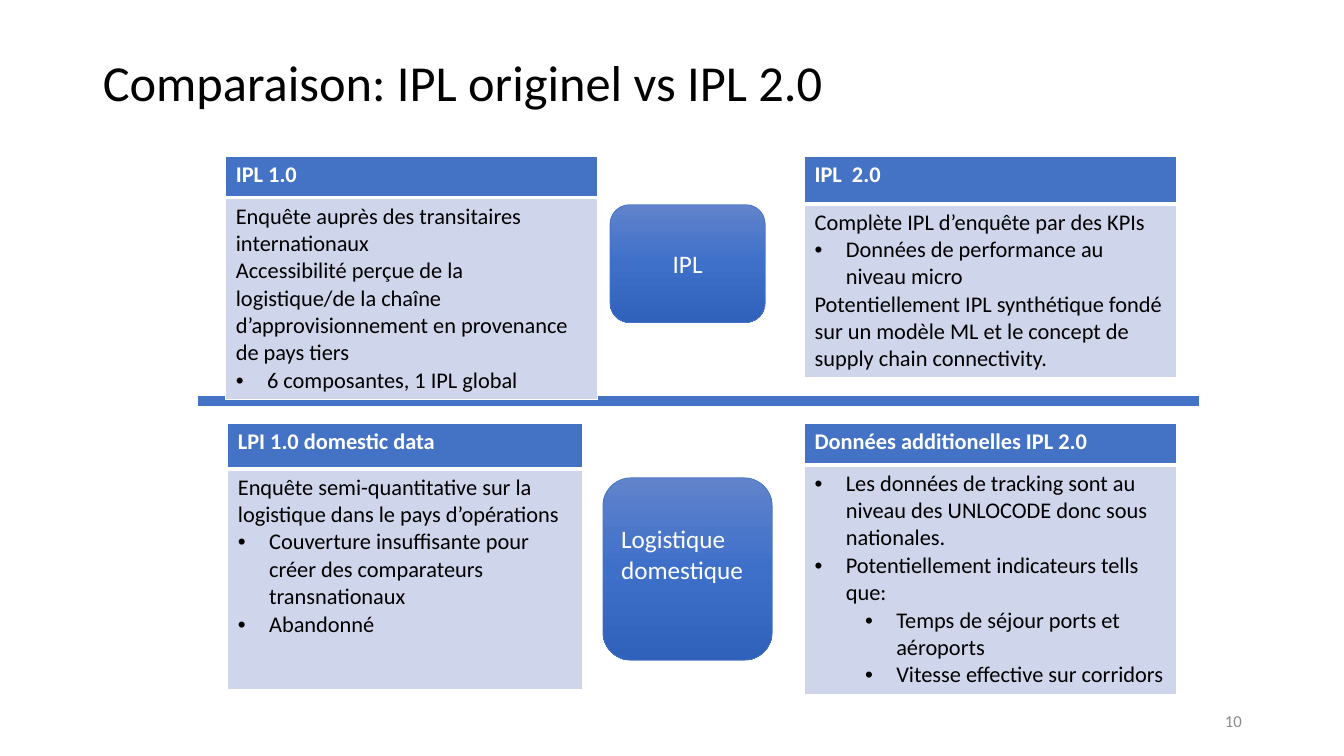
from copy import deepcopy
from dataclasses import dataclass

from pptx import Presentation
from pptx import util as u
from pptx.dml.color import RGBColor
from pptx.enum import shapes, text
from pptx.oxml import parse_xml
from pptx.oxml.ns import nsdecls, qn

BLACK = RGBColor(0x00, 0x00, 0x00)
WHITE = RGBColor(0xFF, 0xFF, 0xFF)
GREY = RGBColor(0x8C, 0x8C, 0x8C)
BLUE = RGBColor(0x44, 0x72, 0xC4)
PALE_BLUE = RGBColor(0xCF, 0xD5, 0xEA)
GRADIENT = (
    (0, RGBColor(0x61, 0x83, 0xCB)),
    (0.5, RGBColor(0x3E, 0x70, 0xCA)),
    (1, RGBColor(0x30, 0x62, 0xBB)),
)
FONT = "Calibri"
SLIDE_WIDTH = u.Inches(13.33)
SLIDE_HEIGHT = u.Inches(7.5)
GRID = 100
LEFT, CENTER, RIGHT = text.PP_ALIGN.LEFT, text.PP_ALIGN.CENTER, text.PP_ALIGN.RIGHT
UPPER_ROW, LOWER_ROW = 20.67, 56
RIGHT_COLUMN = 59.86


@dataclass(frozen=True)
class Box:
    col: float
    row: float
    cols: float
    rows: float

    def place(self) -> tuple[int, int, int, int]:
        return across(self.col), down(self.row), across(self.cols), down(self.rows)


@dataclass(frozen=True)
class Line:
    words: str
    bullet_level: int = 0


@dataclass(frozen=True)
class Panel:
    box: Box
    header_rows: float
    heading: str
    lines: tuple[Line, ...]


@dataclass(frozen=True)
class Topic:
    box: Box
    words: str
    align: text.PP_ALIGN
    bottom_inset: float


PANELS = (
    Panel(Box(16.8, UPPER_ROW, 27.68, 28.54), 5.47, "IPL 1.0", (
        Line("Enquête auprès des transitaires internationaux"),
        Line("Accessibilité perçue de la logistique/de la chaîne "
             "d’approvisionnement en provenance de pays tiers"),
        Line("6 composantes, 1 IPL global", 1),
    )),
    Panel(Box(RIGHT_COLUMN, UPPER_ROW, 27.68, 29.34), 6.27, "IPL  2.0", (
        Line("Complète IPL d’enquête par des KPIs"),
        Line("Données de performance au niveau micro", 1),
        Line("Potentiellement IPL synthétique fondé sur un modèle ML "
             "et le concept de supply chain connectivity."),
    )),
    Panel(Box(16.95, LOWER_ROW, 26.41, 35.2), 6, "LPI 1.0 domestic data", (
        Line("Enquête semi-quantitative sur la logistique dans le pays d’opérations"),
        Line("Couverture insuffisante pour créer des comparateurs transnationaux", 1),
        Line("Abandonné", 1),
    )),
    Panel(Box(RIGHT_COLUMN, LOWER_ROW, 27.68, 35.87), 5.47, "Données additionelles IPL 2.0", (
        Line("Les données de tracking sont au niveau des UNLOCODE donc sous nationales.", 1),
        Line("Potentiellement indicateurs tells que:", 1),
        Line("Temps de séjour ports et aéroports", 2),
        Line("Vitesse effective sur corridors", 2),
    )),
)
TOPICS = (
    Topic(Box(45.39, 27.07, 11.55, 15.6), "IPL", CENTER, 0.67),
    Topic(Box(44.86, 63.2, 12.6, 24.13), "Logistique domestique", LEFT, 4.67),
)


def across(cols: float) -> int:
    return u.Emu(round(SLIDE_WIDTH * cols / GRID))


def down(rows: float) -> int:
    return u.Emu(round(SLIDE_HEIGHT * rows / GRID))


def write(paragraph, words: str, *, size: float = 16, color: RGBColor = BLACK,
          bold: bool = False, align: text.PP_ALIGN = LEFT, bullet_level: int = 0) -> None:
    paragraph.alignment = align
    run = paragraph.add_run()
    run.text = words
    run.font.name = FONT
    run.font.size = u.Pt(size)
    run.font.bold = bold
    run.font.color.rgb = color
    if bullet_level:
        paragraph.level = bullet_level - 1
        properties = paragraph._p.get_or_add_pPr()
        properties.set("marL", str(u.Inches(0.31 + 0.5 * (bullet_level - 1))))
        properties.set("indent", str(-u.Inches(0.31)))
        properties.append(parse_xml(f'<a:buFont {nsdecls("a")} typeface="Arial"/>'))
        properties.append(parse_xml(f'<a:buChar {nsdecls("a")} char="•"/>'))


def style_cell(cell, fill: RGBColor, top: float, bottom: float) -> None:
    properties = cell._tc.get_or_add_tcPr()
    for side, width in (("L", 1), ("R", 1), ("T", top), ("B", bottom)):
        properties.append(parse_xml(
            f'<a:ln{side} {nsdecls("a")} w="{u.Pt(width)}"><a:solidFill>'
            f'<a:srgbClr val="{WHITE}"/></a:solidFill></a:ln{side}>'))
    cell.fill.solid()
    cell.fill.fore_color.rgb = fill


def draw_panel(slide, panel: Panel) -> None:
    table = slide.shapes.add_table(2, 1, *panel.box.place()).table
    table.rows[0].height = down(panel.header_rows)
    table.rows[1].height = down(panel.box.rows - panel.header_rows)
    header, body = table.cell(0, 0), table.cell(1, 0)
    style_cell(header, BLUE, 1, 3)
    style_cell(body, PALE_BLUE, 3, 1)
    write(header.text_frame.paragraphs[0], panel.heading, color=WHITE, bold=True)
    for index, line in enumerate(panel.lines):
        frame = body.text_frame
        paragraph = frame.add_paragraph() if index else frame.paragraphs[0]
        write(paragraph, line.words, bullet_level=line.bullet_level)


def draw_topic(slide, topic: Topic) -> None:
    button = slide.shapes.add_shape(
        shapes.MSO_SHAPE.ROUNDED_RECTANGLE, *topic.box.place())
    button.shadow.inherit = False
    button.fill.gradient()
    button.fill.gradient_angle = 270
    stops = button._element.spPr.find(qn("a:gradFill")).find(qn("a:gsLst"))
    stops.insert(1, deepcopy(stops[0]))
    for stop, (position, color) in zip(button.fill.gradient_stops, GRADIENT):
        stop.position = position
        stop.color.rgb = color
    button.line.color.rgb = BLUE
    button.line.width = u.Pt(0.5)
    frame = button.text_frame
    frame.word_wrap = True
    frame.vertical_anchor = text.MSO_ANCHOR.MIDDLE
    frame.margin_bottom = down(topic.bottom_inset)
    write(frame.paragraphs[0], topic.words, size=18, color=WHITE, align=topic.align)


def draw_title(slide) -> None:
    title = slide.shapes.title
    title.left, title.top, title.width, title.height = Box(6.9, 5.33, 86.27, 19.33).place()
    frame = title.text_frame
    frame.word_wrap = True
    frame.vertical_anchor = text.MSO_ANCHOR.MIDDLE
    frame.margin_bottom = down(8)
    frame.paragraphs[0].line_spacing = 0.9
    write(frame.paragraphs[0], "Comparaison: IPL originel vs IPL 2.0", size=36)


def draw_divider(slide) -> None:
    divider = slide.shapes.add_connector(
        shapes.MSO_CONNECTOR.STRAIGHT, across(14.7), down(53.07), across(89.2), down(53.07))
    divider.line.color.rgb = BLUE
    divider.line.width = u.Pt(7.25)
    divider._element.spPr.append(parse_xml(f'<a:effectLst {nsdecls("a")}/>'))


def draw_page_number(slide) -> None:
    frame = slide.shapes.add_textbox(*Box(70.65, 92.67, 22.5, 5.33).place()).text_frame
    frame.word_wrap = True
    frame.vertical_anchor = text.MSO_ANCHOR.MIDDLE
    write(frame.paragraphs[0], "10", size=12, color=GREY, align=RIGHT)


def main() -> None:
    deck = Presentation()
    deck.slide_width, deck.slide_height = SLIDE_WIDTH, SLIDE_HEIGHT
    slide = deck.slides.add_slide(deck.slide_layouts.get_by_name("Title Only"))
    draw_title(slide)
    draw_divider(slide)
    for panel in PANELS:
        draw_panel(slide, panel)
    for topic in TOPICS:
        draw_topic(slide, topic)
    draw_page_number(slide)
    deck.save("out.pptx")


if __name__ == "__main__":
    main()
